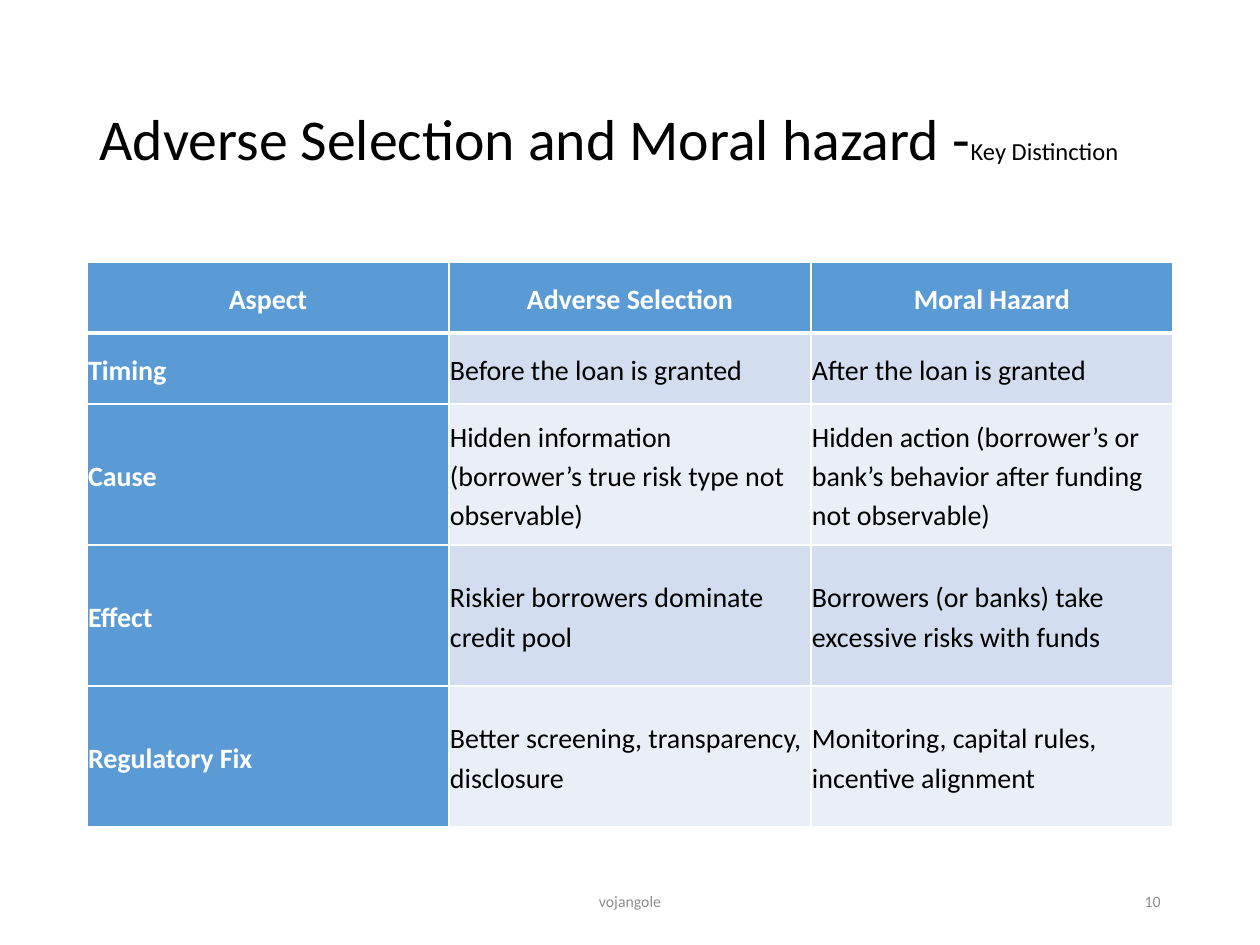
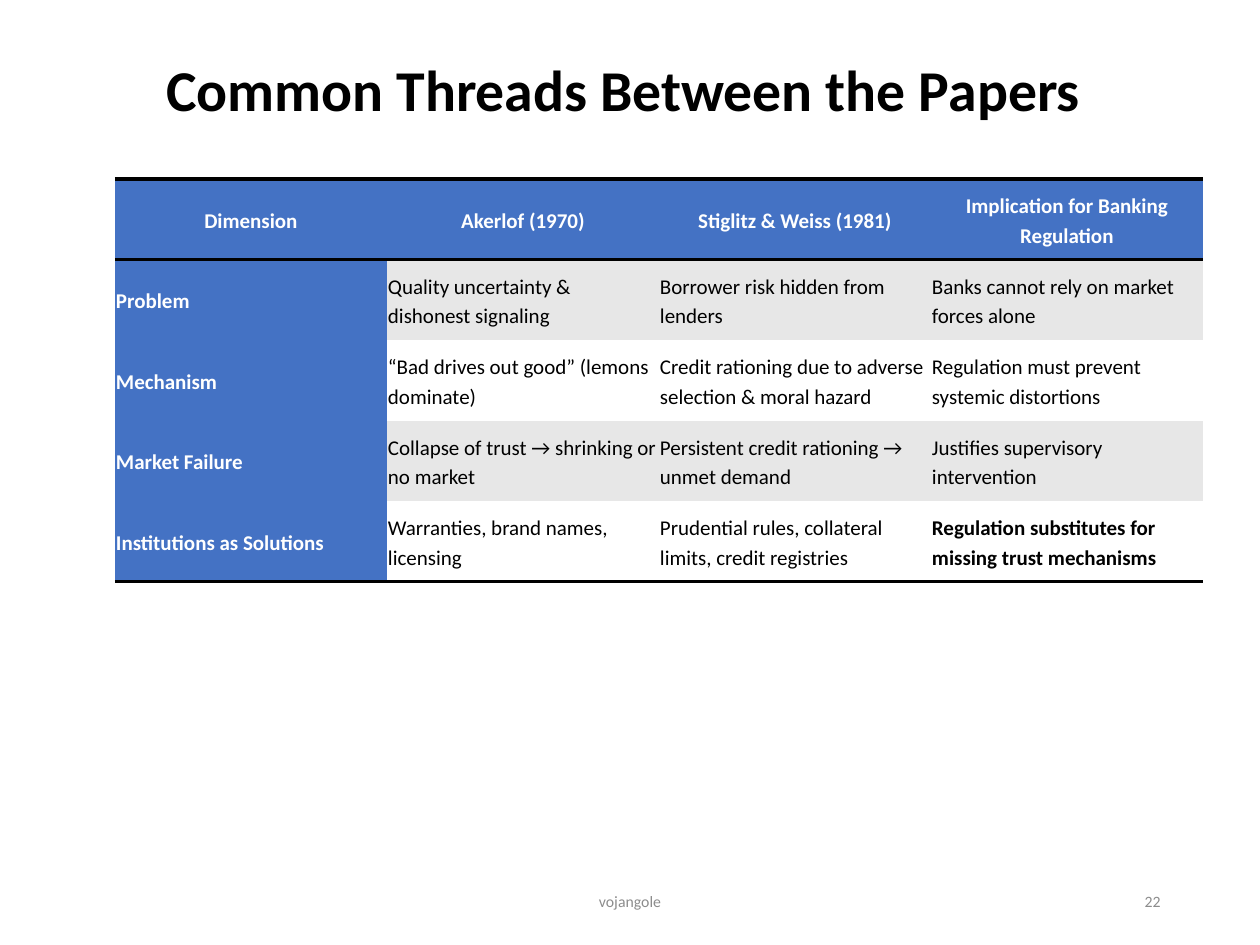
from lxml.etree import SubElement
from pptx import Presentation
from pptx.dml.color import RGBColor
from pptx.enum.text import MSO_ANCHOR as Anchor, PP_ALIGN as Align
from pptx.oxml.ns import qn
from pptx.util import Pt

PX = 914400 / 126
BLACK, WHITE, GREY = "000000", "FFFFFF", "8C8C8C"


def style(para, size, color, bold=False, align=Align.LEFT, spacing=1.0):
    para.alignment = align
    para.line_spacing = spacing
    for span in para.runs:
        span.font.name = "Calibri"
        span.font.size = Pt(size)
        span.font.bold = bold
        span.font.color.rgb = RGBColor.from_string(color)


def add_label(slide, text, left, top, width, height):
    """Add a wrapped, vertically centred text box and return its paragraph."""
    box = slide.shapes.add_textbox(*[round(n * PX) for n in (left, top, width, height)])
    frame = box.text_frame
    frame.word_wrap = True
    frame.vertical_anchor = Anchor.MIDDLE
    frame.text = text
    return frame.paragraphs[0]


# Rules hold (colour, points): outer top and bottom, below the header, between rows,
# and between columns. None means no line.
pages = [
    {
        "number": "10",
        "title": "Adverse Selection and Moral hazard -",
        "subtitle": "Key Distinction",
        "title_height": 183, "title_align": Align.LEFT, "title_bold": False,
        "table_at": (87, 262), "column": 362, "heights": [71, 71, 141, 141, 141],
        "size": 16, "accent": "5B9BD5", "bands": ["D2DEEF", "EAEFF7"],
        "outer": (WHITE, 1), "header": (WHITE, 3),
        "inner": (WHITE, 1), "vertical": (WHITE, 1),
        "bold_cells": [],
        "rows": [
            ["Aspect", "Adverse Selection", "Moral Hazard"],
            ["Timing", "Before the loan is granted", "After the loan is granted"],
            ["Cause", "Hidden information (borrower’s true risk type not observable)",
             "Hidden action (borrower’s or bank’s behavior after funding not observable)"],
            ["Effect", "Riskier borrowers dominate credit pool",
             "Borrowers (or banks) take excessive risks with funds"],
            ["Regulatory Fix", "Better screening, transparency, disclosure",
             "Monitoring, capital rules, incentive alignment"],
        ],
    },
    {
        "number": "22",
        "title": "Common Threads Between the Papers ",
        "subtitle": "",
        "title_height": 86, "title_align": Align.CENTER, "title_bold": True,
        "table_at": (115, 179), "column": 272, "heights": [81, 80, 81, 80, 81],
        "size": 12, "accent": "4472C4", "bands": ["E7E7E7", WHITE],
        "outer": (BLACK, 2), "header": (BLACK, 2), "inner": None, "vertical": None,
        "bold_cells": [(4, 3)],
        "rows": [
            ["Dimension", "Akerlof (1970)", "Stiglitz & Weiss (1981)",
             "Implication for Banking Regulation"],
            ["Problem", "Quality uncertainty & dishonest signaling",
             "Borrower risk hidden from lenders", "Banks cannot rely on market forces alone"],
            ["Mechanism", "“Bad drives out good” (lemons dominate)",
             "Credit rationing due to adverse selection & moral hazard",
             "Regulation must prevent systemic distortions"],
            ["Market Failure", "Collapse of trust → shrinking or no market",
             "Persistent credit rationing → unmet demand",
             "Justifies supervisory intervention"],
            ["Institutions as Solutions", "Warranties, brand names, licensing",
             "Prudential rules, collateral limits, credit registries",
             "Regulation substitutes for missing trust mechanisms"],
        ],
    },
]

deck = Presentation()
deck.slide_width = round(1260 * PX)
deck.slide_height = round(945 * PX)

for page in pages:
    slide = deck.slides.add_slide(deck.slide_layouts[6])

    title = add_label(slide, page["title"], 87, 50, 1086, page["title_height"])
    if page["subtitle"]:
        title.add_run().text = page["subtitle"]
    style(title, 33, BLACK, page["title_bold"], page["title_align"], 0.9)
    for subtitle in title.runs[1:]:
        subtitle.font.size = Pt(14)

    rows, heights = page["rows"], page["heights"]
    row_count, column_count = len(rows), len(rows[0])
    left, top = page["table_at"]
    table = slide.shapes.add_table(
        row_count, column_count, round(left * PX), round(top * PX),
        round(page["column"] * column_count * PX), round(sum(heights) * PX)).table
    table.first_row = table.horz_banding = False
    for column in table.columns:
        column.width = round(page["column"] * PX)
    for row, height in zip(table.rows, heights):
        row.height = round(height * PX)

    # One rule per horizontal boundary, from the top edge to the bottom edge
    rules = [page["outer"], page["header"], *[page["inner"]] * (row_count - 2), page["outer"]]
    for r, texts in enumerate(rows):
        for c, text in enumerate(texts):
            cell = table.cell(r, c)
            cell.text = text
            cell.vertical_anchor = Anchor.MIDDLE
            cell.margin_left = cell.margin_right = round(PX)
            cell.margin_top = cell.margin_bottom = round(PX)

            sides = {"lnL": page["vertical"], "lnR": page["vertical"],
                     "lnT": rules[r], "lnB": rules[r + 1]}
            for side, rule in sides.items():
                line = SubElement(cell._tc.get_or_add_tcPr(), qn(f"a:{side}"))
                if rule:
                    color, points = rule
                    line.set("w", str(Pt(points)))
                    SubElement(SubElement(line, qn("a:solidFill")), qn("a:srgbClr"), val=color)
                else:
                    SubElement(line, qn("a:noFill"))

            is_heading = r == 0 or c == 0
            fill = page["accent"] if is_heading else page["bands"][(r - 1) % 2]
            cell.fill.solid()
            cell.fill.fore_color.rgb = RGBColor.from_string(fill)
            style(cell.text_frame.paragraphs[0], page["size"],
                  WHITE if is_heading else BLACK,
                  is_heading or (r, c) in page["bold_cells"],
                  Align.CENTER if r == 0 else Align.LEFT, 1.15)

    footer = add_label(slide, "vojangole", 417, 876, 426, 50)
    style(footer, 9, GREY, align=Align.CENTER)
    number = add_label(slide, page["number"], 890, 876, 283, 50)
    style(number, 9, GREY, align=Align.RIGHT)

deck.save("out.pptx")
